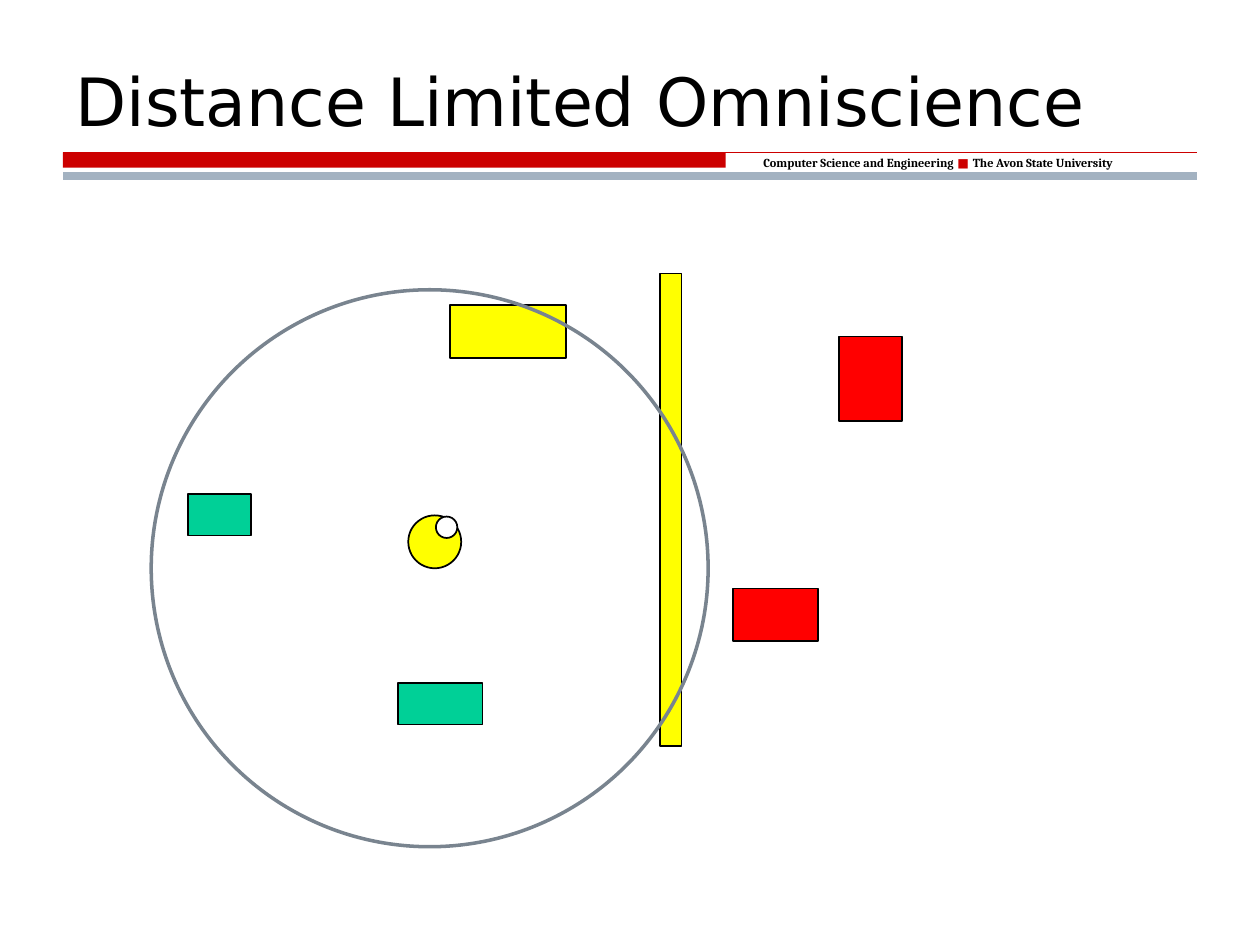
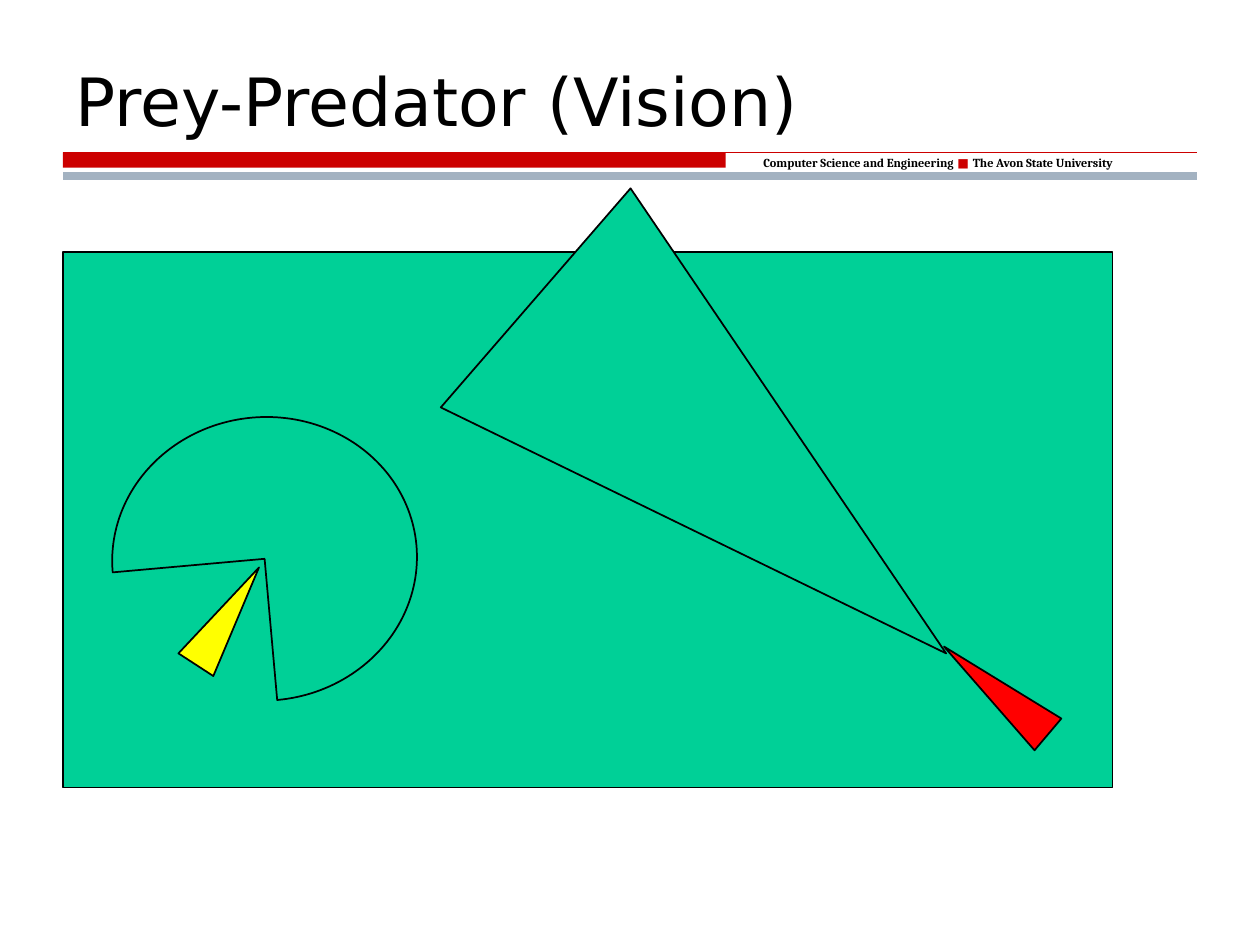
from collections import namedtuple
from dataclasses import dataclass

from lxml import etree
from pptx import Presentation
from pptx.dml.color import RGBColor
from pptx.enum.shapes import MSO_CONNECTOR, MSO_SHAPE
from pptx.enum.text import MSO_ANCHOR
from pptx.oxml.ns import qn
from pptx.util import Inches, Pt

RECT = MSO_SHAPE.RECTANGLE
OVAL = MSO_SHAPE.OVAL
TRIANGLE = MSO_SHAPE.ISOSCELES_TRIANGLE
PIE = MSO_SHAPE.PIE
STRAIGHT = MSO_CONNECTOR.STRAIGHT
ANCHOR_TOP, ANCHOR_BOTTOM = MSO_ANCHOR.TOP, MSO_ANCHOR.BOTTOM

Box = namedtuple("Box", "left top width height")


@dataclass(frozen=True)
class Theme:
    black: str = "000000"
    white: str = "FFFFFF"
    crimson: str = "CC0000"
    steel: str = "A3B2C1"
    slate: str = "79848F"
    yellow: str = "FFFF00"
    green: str = "00D097"
    red: str = "FF0000"
    sans: str = "DejaVu Sans"
    serif: str = "Cambria"
    title_size: float = 38
    affiliation_size: float = 7
    outline: float = 1
    range_outline: float = 2
    rule: float = 0.75
    thick_rule: float = 4.5


THEME = Theme()
TITLE_BOX = Box(0.5, 0.25, 9, 0.91)
HEADER_BOX = Box(0.5, 1.21, 9, 0.19)
WORLD_BOX = Box(1.2, 2.17, 5.96, 4.55)
FIELD_BOX = Box(0.5, 2, 8.33, 4.25)


def rgb(color):
    return RGBColor.from_string(color)


def within(box, left, top, width, height):
    """Turn offsets from the corner of a box into a box on the slide."""
    return Box(box.left + left, box.top + top, width, height)


def draw(slide, kind, box, fill=None, line=THEME.black,
         line_width=THEME.outline, rotation=0):
    shape = slide.shapes.add_shape(kind, *map(Inches, box))
    shape.shadow.inherit = False
    shape.rotation = rotation
    if fill:
        shape.fill.solid()
        shape.fill.fore_color.rgb = rgb(fill)
    else:
        shape.fill.background()
    if line:
        shape.line.color.rgb = rgb(line)
        shape.line.width = Pt(line_width)
    else:
        shape.line.fill.background()


def draw_rule(slide, left, top, width, color, weight):
    ends = map(Inches, (left, top, left + width, top))
    rule = slide.shapes.add_connector(STRAIGHT, *ends)
    rule.line.color.rgb = rgb(color)
    rule.line.width = Pt(weight)
    etree.SubElement(rule._element.spPr, qn("a:effectLst"))


def write(slide, box, runs, size, anchor=ANCHOR_TOP, wrap=True):
    """Write one paragraph; each run is (text, font, color, bold)."""
    frame = slide.shapes.add_textbox(*map(Inches, box)).text_frame
    frame.word_wrap = wrap
    frame.vertical_anchor = anchor
    for text, name, color, bold in runs:
        run = frame.paragraphs[0].add_run()
        run.text = text
        run.font.color.rgb = rgb(color)
        for key, value in dict(name=name, size=Pt(size), bold=bold).items():
            setattr(run.font, key, value)


def add_header(slide, box):
    draw(slide, RECT, within(box, 0, 0, 5.26, 0.12), THEME.crimson, line=None)
    draw_rule(slide, box.left, box.top, box.width, THEME.crimson, THEME.rule)
    affiliation = [
        ("Computer Science and Engineering", THEME.serif, THEME.black, True),
        (" ■ ", THEME.sans, THEME.crimson, False),
        ("The Avon State University", THEME.serif, THEME.black, True),
    ]
    write(slide, within(box, 5.46, -0.03, 3.41, 0.22), affiliation,
          THEME.affiliation_size, wrap=False)
    draw_rule(slide, box.left, box.top + box.height, box.width,
              THEME.steel, THEME.thick_rule)


def add_titled_slide(deck, title):
    slide = deck.slides.add_slide(deck.slide_layouts[6])
    add_header(slide, HEADER_BOX)
    write(slide, TITLE_BOX, [(title, THEME.sans, THEME.black, False)],
          THEME.title_size, ANCHOR_BOTTOM)
    return slide


def add_limited_range_world(slide, box):
    """Draw an agent, the objects around it and its circular sensing range."""
    agent = (2.04, 1.92, 0.42, 0.42)
    eye = (2.26, 1.93, 0.17, 0.17)
    draw(slide, OVAL, within(box, *agent), THEME.yellow)
    draw(slide, OVAL, within(box, *eye), THEME.white)

    obstacles = [
        (2.37, 0.25, 0.92, 0.42, THEME.yellow),
        (0.29, 1.75, 0.5, 0.33, THEME.green),
        (5.46, 0.5, 0.5, 0.67, THEME.red),
        (4.62, 2.5, 0.67, 0.42, THEME.red),
        (1.96, 3.25, 0.67, 0.33, THEME.green),
        (4.04, 0, 0.17, 3.75, THEME.yellow),
    ]
    for *place, color in obstacles:
        draw(slide, RECT, within(box, *place), color)

    diameter = 4.42
    sensing_range = within(box, 0, box.height - diameter, diameter, diameter)
    draw(slide, OVAL, sensing_range, line=THEME.slate,
         line_width=THEME.range_outline)


def add_vision_field(slide, box):
    """Draw prey and predator on a field, each with its area of sight."""
    draw(slide, RECT, box, THEME.green)
    prey = (TRIANGLE, 1.14, 2.43, 0.33, 0.92, THEME.yellow, 33)
    predator = (TRIANGLE, 7.24, 2.94, 0.33, 1.08, THEME.red, 310.2)
    predator_sight = (TRIANGLE, 4.23, -0.38, 2.3, 4.31, THEME.green, 130.9)
    prey_sight = (PIE, 0.39, 1.31, 2.42, 2.25, THEME.green, 174.9)
    for kind, *place, color, angle in (prey, predator,
                                       predator_sight, prey_sight):
        draw(slide, kind, within(box, *place), color, rotation=angle)


def main():
    deck = Presentation()
    deck.slide_width, deck.slide_height = Inches(10), Inches(7.5)
    add_limited_range_world(
        add_titled_slide(deck, "Distance Limited Omniscience"), WORLD_BOX)
    add_vision_field(
        add_titled_slide(deck, "Prey-Predator (Vision)"), FIELD_BOX)
    deck.save("out.pptx")


if __name__ == "__main__":
    main()
